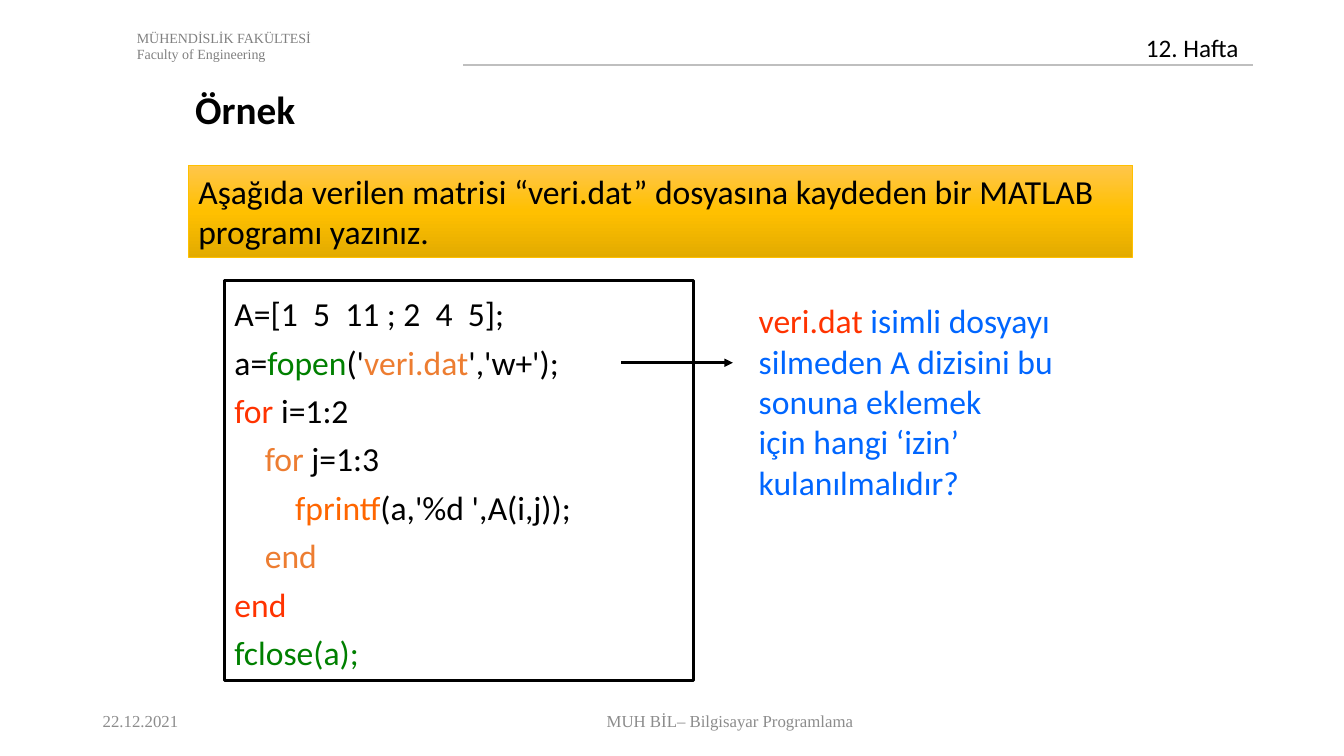
import copy
from dataclasses import dataclass

import pptx
import pptx.dml.color
import pptx.enum.shapes
import pptx.enum.text
import pptx.oxml.ns
import pptx.oxml.xmlchemy
import pptx.util
from pptx.util import Cm

BLACK = "000000"
GREEN = "008000"
RED = "FF3300"
ORANGE = "ED7D31"
BLUE = "0066FF"
HEADER_GREY = "808080"
FOOTER_GREY = "8C8C8C"
SERIF = "Times New Roman"

Align = pptx.enum.text.PP_ALIGN
Anchor = pptx.enum.text.MSO_ANCHOR
AutoSize = pptx.enum.text.MSO_AUTO_SIZE
Line = list[tuple[str, str]]


@dataclass
class Area:
    left: float
    top: float
    width: float
    height: float

    def lengths(self) -> tuple:
        return Cm(self.left), Cm(self.top), Cm(self.width), Cm(self.height)


@dataclass
class Label:
    area: Area
    lines: list[Line]
    style: dict


@dataclass
class Rule:
    start: float
    end: float
    height: float
    color: str
    weight: float
    arrow: bool = False


def rgb(color: str) -> pptx.dml.color.RGBColor:
    return pptx.dml.color.RGBColor.from_string(color)


def write(shape, lines: list[Line], *, size: float = 24, font: str = "Calibri",
          bold: bool = False, align=Align.LEFT, anchor=Anchor.TOP,
          spacing: float = 1.0, wrap: bool = True, grow: bool = True) -> None:
    frame = shape.text_frame
    frame.word_wrap = wrap
    frame.auto_size = AutoSize.SHAPE_TO_FIT_TEXT if grow else AutoSize.NONE
    frame.vertical_anchor = anchor
    for index, line in enumerate(lines):
        paragraph = frame.add_paragraph() if index else frame.paragraphs[0]
        paragraph.alignment = align
        paragraph.line_spacing = spacing
        for text, color in line:
            run = paragraph.add_run()
            run.text = text
            run.font.size = pptx.util.Pt(size)
            run.font.name = font
            run.font.bold = bold
            run.font.color.rgb = rgb(color)


def add_label(slide, label: Label) -> None:
    write(slide.shapes.add_textbox(*label.area.lengths()), label.lines, **label.style)


def add_panel(slide, label: Label, outline: str, weight: float, stops: tuple = ()) -> None:
    panel = slide.shapes.add_shape(
        pptx.enum.shapes.MSO_SHAPE.RECTANGLE, *label.area.lengths())
    panel.shadow.inherit = False
    panel.line.color.rgb = rgb(outline)
    panel.line.width = pptx.util.Pt(weight)
    if stops:
        panel.fill.gradient()
        panel.fill.gradient_angle = 270
        first = panel._element.spPr.find(".//" + pptx.oxml.ns.qn("a:gs"))
        first.addnext(copy.deepcopy(first))
        for index, (stop, color) in enumerate(zip(panel.fill.gradient_stops, stops)):
            stop.position = index / (len(stops) - 1)
            stop.color.rgb = rgb(color)
    else:
        panel.fill.background()
    write(panel, label.lines, **label.style)


def add_rule(slide, rule: Rule) -> None:
    line = slide.shapes.add_connector(
        pptx.enum.shapes.MSO_CONNECTOR.STRAIGHT,
        Cm(rule.start), Cm(rule.height), Cm(rule.end), Cm(rule.height))
    line.line.color.rgb = rgb(rule.color)
    line.line.width = pptx.util.Pt(rule.weight)
    properties = line._element.spPr
    if rule.arrow:
        tail = pptx.oxml.xmlchemy.OxmlElement("a:tailEnd")
        tail.set("type", "triangle")
        properties.find(pptx.oxml.ns.qn("a:ln")).append(tail)
    properties.append(pptx.oxml.xmlchemy.OxmlElement("a:effectLst"))


HEADER_RULE = Rule(11.68, 31.57, 1.63, "BFBFBF", 1.5)
MODE_ARROW = Rule(15.65, 18.47, 9.14, BLACK, 2, arrow=True)

FACULTY = Label(
    Area(3.2, 0.61, 16.94, 1.12),
    [[("MÜHENDİSLİK FAKÜLTESİ", HEADER_GREY)], [("Faculty of Engineering", HEADER_GREY)]],
    dict(size=10, font=SERIF))
WEEK = Label(Area(28.63, 0.69, 2.92, 1.02), [[("12. Hafta", BLACK)]], dict(size=18))
TASK = Label(
    Area(4.75, 4.17, 23.8, 2.31),
    [[("Aşağıda verilen matrisi “veri.dat” dosyasına kaydeden bir MATLAB programı yazınız.",
       BLACK)]],
    {})
CODE = Label(
    Area(5.66, 7.06, 11.81, 10.08),
    [
        [("A=[1  5  11 ; 2  4  5];", BLACK)],
        [("a=", BLACK), ("fopen", GREEN), ("('", BLACK), ("veri.dat", ORANGE),
         ("','w+');", BLACK)],
        [("for ", RED), ("i=1:2", BLACK)],
        [("    for ", ORANGE), ("j=1:3", BLACK)],
        [("        fprintf", "FF6600"), ("(a,'%d ',A(i,j));", BLACK)],
        [("    end", ORANGE)],
        [("end", RED)],
        [("fclose(a);", GREEN)],
    ],
    dict(spacing=1.2))
QUESTION = Label(
    Area(18.87, 7.44, 8.38, 5.38),
    [
        [("veri.dat", RED), (" isimli dosyayı", BLUE)],
        [("silmeden A dizisini bu", BLUE)],
        [("sonuna eklemek", BLUE)],
        [("için hangi ‘izin’", BLUE)],
        [("kulanılmalıdır?", BLUE)],
    ],
    dict(wrap=False))
HEADING = Label(Area(4.67, 2.03, 11.96, 1.45), [[("Örnek", BLACK)]], dict(size=28, bold=True))
FOOTER_STYLE = dict(size=12, font=SERIF, anchor=Anchor.MIDDLE, grow=False)
DATE = Label(Area(2.34, 17.65, 3.99, 1.02), [[("22.12.2021", FOOTER_GREY)]], FOOTER_STYLE)
COURSE = Label(
    Area(6.93, 17.65, 22.94, 1.02),
    [[("MUH BİL– Bilgisayar Programlama", FOOTER_GREY)]],
    FOOTER_STYLE | dict(align=Align.CENTER))


def main() -> None:
    deck = pptx.Presentation()
    deck.slide_width = Cm(33.87)
    deck.slide_height = Cm(19.05)
    slide = deck.slides.add_slide(deck.slide_layouts[6])
    add_rule(slide, HEADER_RULE)
    for label in (FACULTY, WEEK):
        add_label(slide, label)
    add_panel(slide, TASK, "FFC000", 0.5, ("FFC64B", "FFC000", "E3AB00"))
    add_panel(slide, CODE, BLACK, 2.25)
    add_rule(slide, MODE_ARROW)
    for label in (QUESTION, HEADING, DATE, COURSE):
        add_label(slide, label)
    deck.save("out.pptx")


if __name__ == "__main__":
    main()
